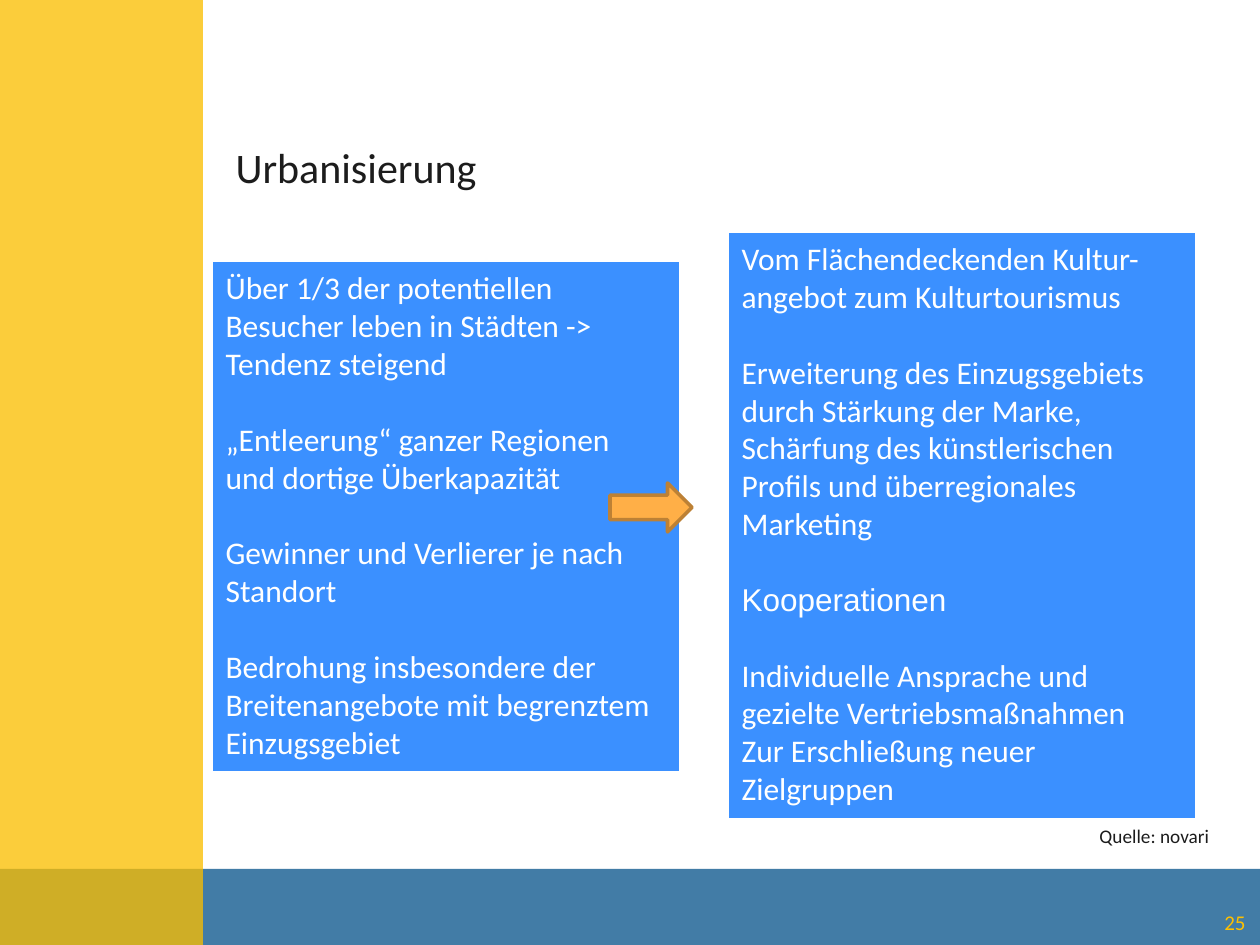
from dataclasses import dataclass

from lxml import etree
from pptx import Presentation
from pptx.dml.color import RGBColor
from pptx.enum.shapes import MSO_SHAPE
from pptx.enum.text import MSO_ANCHOR, MSO_AUTO_SIZE, PP_ALIGN
from pptx.oxml.ns import qn
from pptx.util import Emu, Pt

SLIDE_WIDTH, SLIDE_HEIGHT = 1260, 945
EMU_PER_PX = 9144000 / SLIDE_WIDTH
SIDEBAR_WIDTH = 203
FOOTER_TOP = 869
BLOCK_GAP = 38  # one text line between blocks

DARK, WHITE, GOLD = "1C1C1C", "FFFFFF", "FFC000"


@dataclass
class Box:
    left: int
    top: int
    width: int
    height: int


@dataclass
class Panel:
    box: Box
    blocks: list[list[str]]


PANELS = [
    Panel(Box(213, 262, 466, 509), [
        ["Über 1/3 der potentiellen Besucher leben in Städten -> Tendenz steigend"],
        ["„Entleerung“ ganzer Regionen und dortige Überkapazität"],
        ["Gewinner und Verlierer je nach Standort"],
        ["Bedrohung insbesondere der", "Breitenangebote mit begrenztem", "Einzugsgebiet"],
    ]),
    Panel(Box(729, 233, 466, 585), [
        ["Vom Flächendeckenden Kultur-angebot zum Kulturtourismus"],
        ["Erweiterung des Einzugsgebiets", "durch Stärkung der Marke,",
         "Schärfung des künstlerischen", "Profils und überregionales", "Marketing"],
        ["Kooperationen"],
        ["Individuelle Ansprache und gezielte Vertriebsmaßnahmen",
         "Zur Erschließung neuer Zielgruppen"],
    ]),
]


def px(length: int) -> Emu:
    return Emu(round(length * EMU_PER_PX))


def color(value: str) -> RGBColor:
    return RGBColor.from_string(value)


def place(shape, box: Box) -> None:
    shape.left, shape.top = px(box.left), px(box.top)
    shape.width, shape.height = px(box.width), px(box.height)


def setup_frame(shape, wrap: bool = True, anchor=MSO_ANCHOR.TOP):
    frame = shape.text_frame
    frame.auto_size = MSO_AUTO_SIZE.NONE
    frame.word_wrap = wrap
    frame.vertical_anchor = anchor
    return frame


def write(paragraph, text: str, *, size: int, fill: str, font: str = "Calibri",
          align=PP_ALIGN.LEFT, before: int = 0) -> None:
    paragraph.alignment = align
    paragraph.space_before = px(before)
    paragraph.space_after = Pt(0)
    run = paragraph.add_run()
    run.text = text
    run.font.name = font
    run.font.size = Pt(size)
    run.font.color.rgb = color(fill)


def add_shape(slide, kind, box: Box, fill: str, opacity: int = 100):
    shape = slide.shapes.add_shape(kind, *map(px, (box.left, box.top, box.width, box.height)))
    shape.shadow.inherit = False
    shape.fill.solid()
    shape.fill.fore_color.rgb = color(fill)
    shape.line.fill.background()
    if opacity < 100:
        rgb = shape.fill._xPr.find(".//" + qn("a:srgbClr"))
        etree.SubElement(rgb, qn("a:alpha")).set("val", str(opacity * 1000))
    return shape


def add_label(slide, box: Box, text: str, wrap: bool = False,
              anchor=MSO_ANCHOR.TOP, **text_format) -> None:
    label = slide.shapes.add_textbox(0, 0, 0, 0)
    place(label, box)
    write(setup_frame(label, wrap, anchor).paragraphs[0], text, **text_format)


def fill_panel(shape, panel: Panel) -> None:
    place(shape, panel.box)
    shape.fill.solid()
    shape.fill.fore_color.rgb = color("3B90FF")
    frame = setup_frame(shape)
    paragraph = frame.paragraphs[0]
    for block_index, block in enumerate(panel.blocks):
        for line_index, text in enumerate(block):
            if block_index or line_index:
                paragraph = frame.add_paragraph()
            properties = paragraph._p.get_or_add_pPr()
            properties.set("marL", "0")
            properties.set("indent", "0")
            etree.SubElement(properties, qn("a:buNone"))
            write(paragraph, text, size=18, fill=WHITE,
                  font="Arial" if text == "Kooperationen" else "Calibri",
                  before=BLOCK_GAP if block_index and not line_index else 0)


def main() -> None:
    presentation = Presentation()
    presentation.slide_width = px(SLIDE_WIDTH)
    presentation.slide_height = px(SLIDE_HEIGHT)
    slide = presentation.slides.add_slide(presentation.slide_layouts[3])

    # Footer band and sidebar, overlapping in the corner
    add_shape(slide, MSO_SHAPE.RECTANGLE,
              Box(0, FOOTER_TOP, SLIDE_WIDTH, SLIDE_HEIGHT - FOOTER_TOP), "0A558C", 77)
    add_shape(slide, MSO_SHAPE.RECTANGLE,
              Box(0, 0, SIDEBAR_WIDTH, SLIDE_HEIGHT), "FABE00", 77)

    # Title
    title = slide.shapes.title
    place(title, Box(223, 135, 268, 63))
    write(setup_frame(title, wrap=False).paragraphs[0], "Urbanisierung", size=24, fill=DARK)

    # Situation on the left, response on the right
    for index, panel in enumerate(PANELS, start=1):
        fill_panel(slide.placeholders[index], panel)

    # Arrow from situation to response
    arrow = add_shape(slide, MSO_SHAPE.RIGHT_ARROW, Box(610, 483, 82, 49), "FFAF47")
    arrow.line.color.rgb = color("BD8135")
    arrow.line.width = Pt(2)

    # Source and page number
    add_label(slide, Box(1087, 818, 132, 37), "Quelle: novari", size=11, fill=DARK)
    add_label(slide, Box(964, 900, 294, 45), "25", wrap=True, anchor=MSO_ANCHOR.MIDDLE,
              size=12, fill=GOLD, align=PP_ALIGN.RIGHT)

    presentation.save("out.pptx")


if __name__ == "__main__":
    main()
